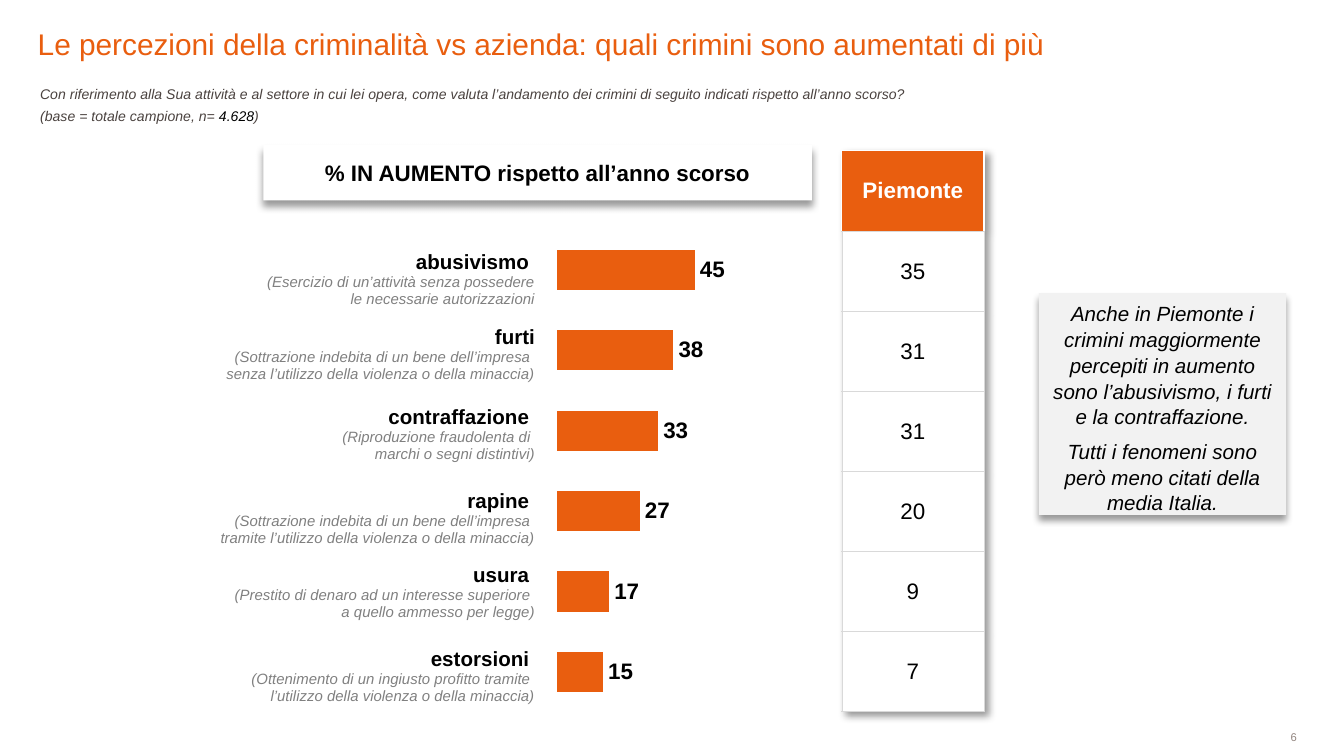
from dataclasses import dataclass

from lxml.etree import SubElement
from pptx import Presentation
from pptx.chart.data import CategoryChartData
from pptx.dml.color import RGBColor
from pptx.enum.chart import XL_CHART_TYPE, XL_LABEL_POSITION
from pptx.enum.shapes import MSO_SHAPE
from pptx.enum.text import MSO_ANCHOR, MSO_AUTO_SIZE, PP_ALIGN
from pptx.oxml import parse_xml
from pptx.oxml.ns import nsdecls, qn
from pptx.util import Pt

FONT = "Arial"
COLORS = {
    "orange": "E95E0F", "black": "000000", "white": "FFFFFF", "brown": "4A423F",
    "gray": "808080", "footer": "928580", "border": "D9D9D9", "panel": "F2F2F2",
}


@dataclass(frozen=True)
class Box:
    left: float
    top: float
    width: float
    height: float

    def lengths(self) -> tuple:
        return Pt(self.left), Pt(self.top), Pt(self.width), Pt(self.height)


@dataclass(frozen=True)
class Span:
    text: str
    size: float
    color: str = "black"
    bold: bool = False
    italic: bool = False


@dataclass(frozen=True)
class Crime:
    name: str
    details: tuple[str, str]
    row_height: float
    total: int
    piemonte: int


CRIMES = [
    Crime("abusivismo ", ("(Esercizio di un’attività senza possedere",
                          " le necessarie autorizzazioni"), 39.9, 45, 35),
    Crime("furti", ("(Sottrazione indebita di un bene dell’impresa ",
                    "senza l’utilizzo della violenza o della minaccia)"), 43, 38, 31),
    Crime("contraffazione ", ("(Riproduzione fraudolenta di ",
                              "marchi o segni distintivi)"), 45, 33, 31),
    Crime("rapine ", ("(Sottrazione indebita di un bene dell’impresa ",
                      "tramite l’utilizzo della violenza o della minaccia)"), 39.9, 27, 20),
    Crime("usura ", ("(Prestito di denaro ad un interesse superiore ",
                     "a quello ammesso per legge)"), 45, 17, 9),
    Crime("estorsioni ", ("(Ottenimento di un ingiusto profitto tramite ",
                          "l’utilizzo della violenza o della minaccia)"), 39.9, 15, 7),
]


def rgb(color: str) -> RGBColor:
    return RGBColor.from_string(COLORS[color])


def write(frame, paragraphs: list[list[Span]], align=PP_ALIGN.LEFT,
          space_before: float = 0, line_spacing: float = 1.0) -> None:
    for index, spans in enumerate(paragraphs):
        para = frame.add_paragraph() if index else frame.paragraphs[0]
        para.alignment = align
        para.line_spacing = line_spacing
        para.space_before = Pt(space_before if index else 0)
        for span in spans:
            run = para.add_run()
            run.text = span.text
            font = run.font
            font.name, font.size = FONT, Pt(span.size)
            font.bold, font.italic = span.bold, span.italic
            font.color.rgb = rgb(span.color)


def set_margins(item, left: float, top: float, right: float, bottom: float) -> None:
    item.margin_left, item.margin_top = Pt(left), Pt(top)
    item.margin_right, item.margin_bottom = Pt(right), Pt(bottom)


def shadow_effect(direction: int):
    return parse_xml(
        f'<a:effectLst {nsdecls("a")}><a:outerShdw blurRad="{Pt(4)}" dist="{Pt(3)}" '
        f'dir="{direction * 60000}" algn="t" rotWithShape="0"><a:srgbClr val="{COLORS["black"]}">'
        '<a:alpha val="40000"/></a:srgbClr></a:outerShdw></a:effectLst>')


def add_text(slide, box: Box, spans: list[Span], wrap: bool = True):
    frame = slide.shapes.add_textbox(*box.lengths()).text_frame
    frame.word_wrap = wrap
    write(frame, [spans])


def add_panel(slide, box: Box, fill: str, shadow: bool = True):
    """Add a borderless rectangle and return its text frame."""
    panel = slide.shapes.add_shape(MSO_SHAPE.RECTANGLE, *box.lengths())
    panel.shadow.inherit = False
    panel.fill.solid()
    panel.fill.fore_color.rgb = rgb(fill)
    panel.line.fill.background()
    if shadow:
        properties = panel._element.spPr
        properties.replace(properties.find(qn("a:effectLst")), shadow_effect(90))
    panel.text_frame.word_wrap = True
    return panel.text_frame


def add_column_table(slide, box: Box, row_heights: list[float]):
    table = slide.shapes.add_table(len(row_heights), 1, *box.lengths()).table
    table.first_row = table.horz_banding = False
    for row, height in zip(table.rows, row_heights):
        row.height = Pt(height)
    return table


def set_borders(cell, sides: dict[str, tuple[str, float]]) -> None:
    properties = cell._tc.get_or_add_tcPr()
    for index, side in enumerate("LRTB"):
        color, width = sides[side]
        properties.insert(index, parse_xml(
            f'<a:ln{side} {nsdecls("a")} w="{Pt(width)}"><a:solidFill>'
            f'<a:srgbClr val="{COLORS[color]}"/></a:solidFill></a:ln{side}>'))


def add_crime_labels(slide, box: Box) -> None:
    table = add_column_table(slide, box, [crime.row_height for crime in CRIMES])
    for crime, row in zip(CRIMES, table.rows):
        cell = row.cells[0]
        cell.fill.background()
        details = [[Span(line, 8, "gray", italic=True)] for line in crime.details]
        write(cell.text_frame, [[Span(crime.name, 11, bold=True)], *details], PP_ALIGN.RIGHT)


def add_piemonte_table(slide, box: Box) -> None:
    count = len(CRIMES) + 1
    table = add_column_table(slide, box, [box.height / count] * count)
    table._tbl.tblPr.insert(0, shadow_effect(45))
    values = ["Piemonte"] + [str(crime.piemonte) for crime in CRIMES]
    for index, (value, row) in enumerate(zip(values, table.rows)):
        cell, header = row.cells[0], index == 0
        cell.vertical_anchor = MSO_ANCHOR.MIDDLE
        cell.fill.solid()
        cell.fill.fore_color.rgb = rgb("orange" if header else "white")
        thin = ("border", 0.25)
        outer = ("white", 1) if header else thin
        set_borders(cell, {"L": outer, "R": outer, "T": outer, "B": thin})
        if not header:
            set_margins(cell, 0.7, 0.7, 0.7, 0)
        write(cell.text_frame, [[Span(value, 12, "white" if header else "black", header)]],
              PP_ALIGN.CENTER)


def add_increase_chart(slide, box: Box) -> None:
    data = CategoryChartData(number_format="0")
    data.categories = [str(number + 1) for number in range(len(CRIMES))]
    data.add_series("Series 1", [crime.total for crime in CRIMES])
    chart = slide.shapes.add_chart(XL_CHART_TYPE.BAR_CLUSTERED, *box.lengths(), data).chart
    chart.has_legend = chart.has_title = False
    chart.font.name, chart.font.size = FONT, Pt(13.5)
    chart.font.color.rgb = rgb("black")
    chart.category_axis.reverse_order = True
    chart.category_axis.visible = False
    axis = chart.value_axis
    axis.minimum_scale, axis.maximum_scale, axis.major_unit = 0, 100, 10
    axis.has_major_gridlines = axis.visible = False

    plot = chart.plots[0]
    plot.gap_width, plot.vary_by_categories = 100, False
    fill = plot.series[0].format.fill
    fill.solid()
    fill.fore_color.rgb = rgb("orange")
    plot.has_data_labels = True
    labels = plot.data_labels
    labels.show_value = True
    labels.number_format, labels.number_format_is_linked = "0", False
    labels.position = XL_LABEL_POSITION.OUTSIDE_END
    labels.font.name, labels.font.size, labels.font.bold = FONT, Pt(12), True
    labels.font.color.rgb = rgb("black")

    area = chart._chartSpace.chart.plotArea
    for old in area.findall(qn("c:layout")):
        area.remove(old)
    layout = parse_xml(f'<c:layout {nsdecls("c")}><c:manualLayout/></c:layout>')
    for tag, value in [("layoutTarget", "inner"), ("xMode", "edge"), ("yMode", "edge"),
                       ("x", "0.282"), ("y", "0"), ("w", "0.496"), ("h", "1")]:
        SubElement(layout[0], qn(f"c:{tag}"), val=value)
    area.insert(0, layout)


def main() -> None:
    deck = Presentation()
    deck.slide_width, deck.slide_height = Pt(720), Pt(405)
    slide = deck.slides.add_slide(deck.slide_layouts[5])

    title = slide.shapes.title
    title.left, title.top, title.width, title.height = Box(20.2, 6.5, 561.6, 26.6).lengths()
    frame = title.text_frame
    frame.auto_size, frame.vertical_anchor = MSO_AUTO_SIZE.NONE, MSO_ANCHOR.BOTTOM
    set_margins(frame, 0, 0, 0, 0)
    write(frame, [[Span("Le percezioni della criminalità vs azienda: quali crimini sono "
                        "aumentati di più", 16, "orange")]])

    page_number = add_panel(slide, Box(598.3, 391.7, 96.5, 6.5), "white", shadow=False)
    set_margins(page_number, 0, 0, 0, 0)
    page_number.vertical_anchor = MSO_ANCHOR.MIDDLE
    write(page_number, [[Span("6", 6, "footer")]], PP_ALIGN.RIGHT)

    add_increase_chart(slide, Box(205.2, 123.1, 330.5, 258.5))
    add_text(slide, Box(14.4, 42.5, 532.8, 16.6), [
        Span("Con riferimento alla Sua attività e al settore in cui lei opera, come valuta "
             "l’andamento dei crimini di seguito indicati rispetto all’anno scorso?",
             7.5, "brown", italic=True)])
    add_text(slide, Box(14.4, 54, 135.4, 16.6), [
        Span("(base = totale campione, n= ", 7.5, "brown", italic=True),
        Span("4.628", 7.5, italic=True), Span(")", 7.5, "brown", italic=True)], wrap=False)

    add_crime_labels(slide, Box(46.1, 131, 247.7, 252.7))
    heading = add_panel(slide, Box(141.1, 77.8, 293.8, 29.5), "white")
    heading.vertical_anchor = MSO_ANCHOR.MIDDLE
    write(heading, [[Span("% IN AUMENTO rispetto all’anno scorso", 12, bold=True)]],
          PP_ALIGN.CENTER)
    add_piemonte_table(slide, Box(450.9, 80.7, 76.3, 300.6))

    comment = add_panel(slide, Box(556.6, 157, 132.5, 118.8), "panel")
    comment.vertical_anchor = MSO_ANCHOR.TOP
    write(comment, [
        [Span("Anche in Piemonte i crimini maggiormente percepiti in aumento sono "
              "l’abusivismo, i furti e la contraffazione.", 11, italic=True)],
        [Span("Tutti i fenomeni sono però meno citati della media Italia.", 11, italic=True)],
    ], PP_ALIGN.CENTER, space_before=4.5, line_spacing=1.05)
    deck.save("out.pptx")


if __name__ == "__main__":
    main()
